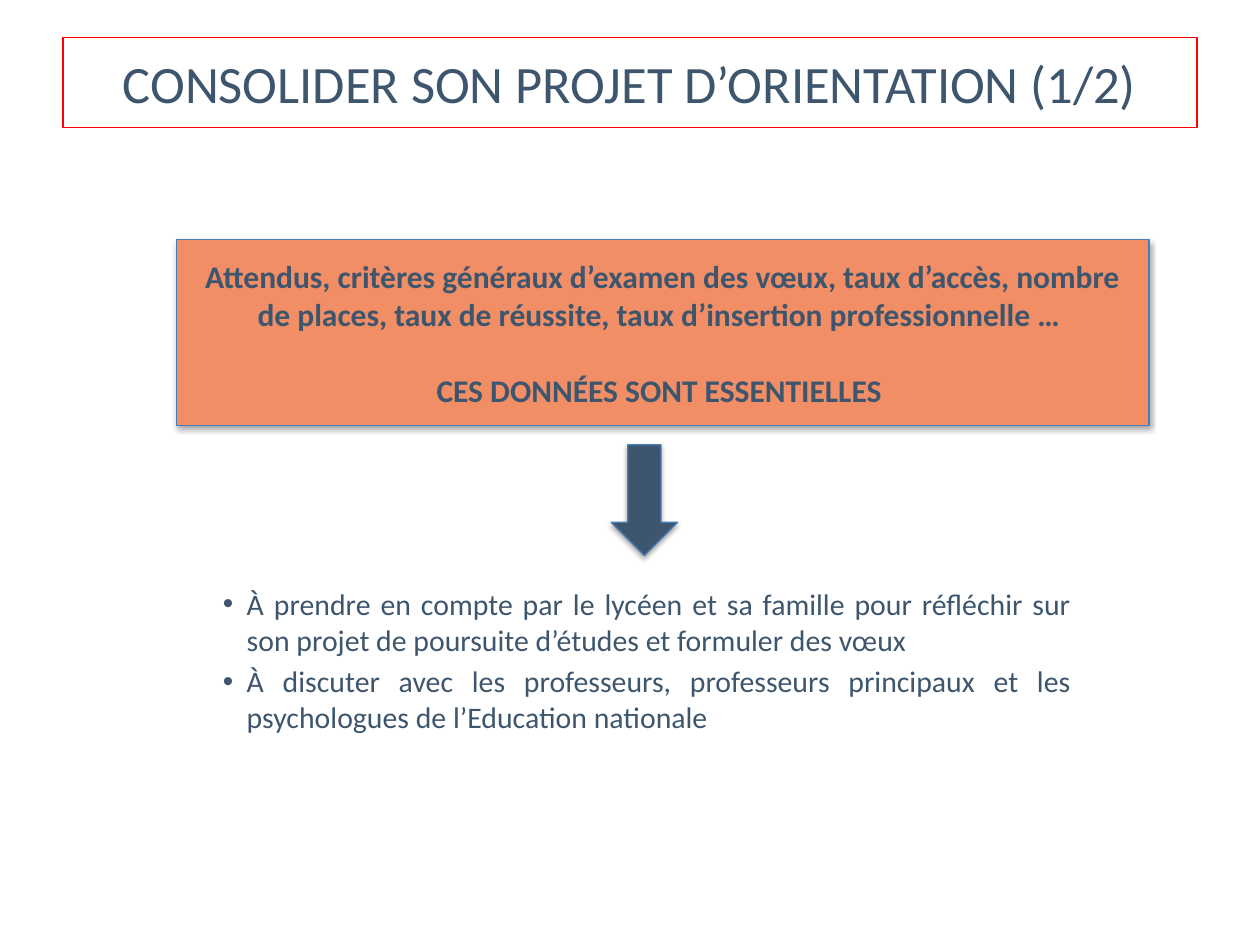
from lxml import etree
from pptx import Presentation
from pptx.dml.color import RGBColor
from pptx.enum.shapes import MSO_SHAPE
from pptx.enum.text import MSO_ANCHOR, PP_ALIGN
from pptx.oxml.ns import qn
from pptx.util import Inches, Pt

RECTANGLE, DOWN_ARROW = MSO_SHAPE.RECTANGLE, MSO_SHAPE.DOWN_ARROW
CENTER, JUSTIFY = PP_ALIGN.CENTER, PP_ALIGN.JUSTIFY
MIDDLE = MSO_ANCHOR.MIDDLE
SLATE, ORANGE, BLUE, RED = "3D566E", "F28E65", "4A7EBB", "FF0000"


def add_box(preset, left, top, width, height, line, fill=None):
    """Add an outlined shape; a filled one also casts a soft shadow downwards."""
    box = slide.shapes.add_shape(
        preset, Inches(left), Inches(top), Inches(width), Inches(height))
    box.line.color.rgb = RGBColor.from_string(line)
    box.line.width = Pt(0.75)
    box.shadow.inherit = False
    if fill is None:
        box.fill.background()
        return box
    box.fill.solid()
    box.fill.fore_color.rgb = RGBColor.from_string(fill)
    effects = box.element.spPr.find(qn("a:effectLst"))
    shadow = etree.SubElement(effects, qn("a:outerShdw"), blurRad=str(Pt(3.1)),
                              dist=str(Pt(1.8)), dir="5400000", rotWithShape="0")
    black = etree.SubElement(shadow, qn("a:srgbClr"), val="000000")
    etree.SubElement(black, qn("a:alpha"), val="35000")
    return box


def write(frame, lines, size, align, bold=False):
    frame.word_wrap = True
    for index, line in enumerate(lines):
        paragraph = frame.paragraphs[0] if index == 0 else frame.add_paragraph()
        paragraph.alignment = align
        run = paragraph.add_run()
        run.text = line
        run.font.name = "Calibri"
        run.font.size = Pt(size)
        run.font.bold = bold
        run.font.color.rgb = RGBColor.from_string(SLATE)


prs = Presentation()
prs.slide_width, prs.slide_height = Inches(10), Inches(7.5)
slide = prs.slides.add_slide(prs.slide_layouts[6])

title = add_box(RECTANGLE, 0.5, 0.3, 9, 0.71, RED)
title.text_frame.vertical_anchor = MIDDLE
write(title.text_frame, ["CONSOLIDER SON PROJET D’ORIENTATION (1/2)"], 30, CENTER)

key_data = add_box(RECTANGLE, 1.4, 1.9, 7.72, 1.48, BLUE, ORANGE)
key_data.text_frame.vertical_anchor = MIDDLE
write(key_data.text_frame, [
    "Attendus, critères généraux d’examen des vœux, taux d’accès, nombre de places, "
    "taux de réussite, taux d’insertion professionnelle … ",
    "CES DONNÉES SONT ESSENTIELLES ",
], 18, CENTER, bold=True)
key_data.text_frame.paragraphs[1].space_before = Pt(22)

add_box(DOWN_ARROW, 4.85, 3.53, 0.53, 0.88, BLUE, SLATE)

advice = slide.shapes.add_textbox(Inches(1.67), Inches(4.6), Inches(6.93), Inches(1.28))
write(advice.text_frame, [
    "À prendre en compte par le lycéen et sa famille pour réfléchir sur son projet "
    "de poursuite d’études et formuler des vœux ",
    "À discuter avec les professeurs, professeurs principaux et les psychologues "
    "de l’Education nationale ",
], 17, JUSTIFY)
for paragraph in advice.text_frame.paragraphs:
    paragraph.space_before = Pt(3.4)
    properties = paragraph._p.get_or_add_pPr()
    properties.set("marL", str(Inches(0.19)))
    properties.set("indent", str(-Inches(0.19)))
    etree.SubElement(properties, qn("a:buFont"), typeface="Arial")
    etree.SubElement(properties, qn("a:buChar"), char="•")

prs.save("out.pptx")
